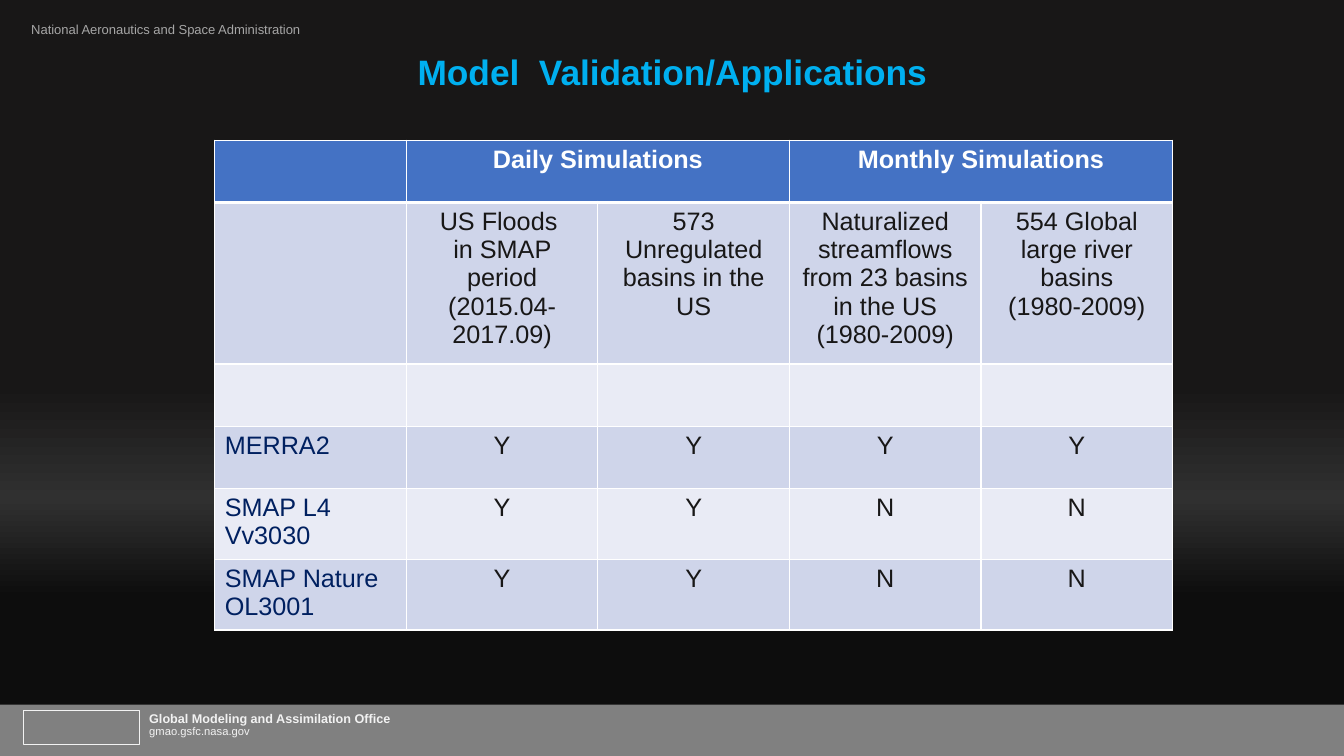
from copy import deepcopy

from lxml import etree
from pptx import Presentation
from pptx.dml.color import RGBColor
from pptx.enum.shapes import MSO_SHAPE
from pptx.enum.text import MSO_ANCHOR, PP_ALIGN
from pptx.oxml.ns import qn
from pptx.util import Inches, Pt

RECT = MSO_SHAPE.RECTANGLE
LEFT, CENTER = PP_ALIGN.LEFT, PP_ALIGN.CENTER
TOP = MSO_ANCHOR.TOP


def rgb(value):
    return RGBColor.from_string(value)


def write(tf, lines, color, align=LEFT, spacing=None):
    """Fill a text frame; each line is (text, size, bold), \v breaks a line."""
    tf.word_wrap = True
    for i, (text, size, bold) in enumerate(lines):
        p = tf.paragraphs[0] if i == 0 else tf.add_paragraph()
        p.text = text
        p.alignment, p.line_spacing = align, spacing
        for r in p.runs:
            for name, value in dict(name="Arial", size=Pt(size), bold=bold).items():
                setattr(r.font, name, value)
            r.font.color.rgb = rgb(color)


prs = Presentation()
prs.slide_width, prs.slide_height = Inches(13.33), Inches(7.5)
s = prs.slides.add_slide(prs.slide_layouts[6])

# Background gradient, running upwards
fill = s.background.fill
fill.gradient()
fill.gradient_angle = 90
stop_list = s._element.find(".//" + qn("a:gsLst"))
stop_list.append(deepcopy(stop_list[-1]))
stops = [(0.21, "0D0D0D"), (0.34, "303030"), (0.49, "181717")]
for stop, (position, color) in zip(fill.gradient_stops, stops):
    stop.position = position
    stop.color.rgb = rgb(color)

# Footer band and plain outlined box
band = s.shapes.add_shape(RECT, 0, Inches(6.99), prs.slide_width, Inches(0.51))
band.shadow.inherit = False
band.fill.solid()
band.fill.fore_color.rgb = rgb("808080")
band.line.fill.background()

box = s.shapes.add_shape(RECT, Inches(0.23), Inches(7.05), Inches(1.15), Inches(0.34))
box.shadow.inherit = False
box.fill.background()
box.line.color.rgb = rgb("F2F2F2")
box.line.width = Pt(0.5)

# Text boxes: position, insets (x, y), lines, colour, alignment, line spacing
text_boxes = [
    ((1.48, 7.07, 2.82, 0.26), (0, 0),
     [("Global Modeling and Assimilation Office", 9, True), ("gmao.gsfc.nasa.gov", 8, False)],
     "F2F2F2", LEFT, 0.9),
    ((0.16, 0.14, 3.91, 0.34), (0.15, 0.07),
     [("National Aeronautics and Space Administration", 9.3, False)], "A6A6A6", LEFT, None),
    ((0.92, 0.49, 11.5, 0.9), (0.1, 0.06),
     [("Model  Validation/Applications", 25.2, True)], "00B0F0", CENTER, 0.9),
]
for place, (inset_x, inset_y), lines, color, align, spacing in text_boxes:
    tf = s.shapes.add_textbox(*map(Inches, place)).text_frame
    tf.margin_left = tf.margin_right = Inches(inset_x)
    tf.margin_top = tf.margin_bottom = Inches(inset_y)
    tf.vertical_anchor = TOP
    write(tf, lines, color, align, spacing)

# Validation table
rows = [
    ["", "Daily Simulations", "", "Monthly Simulations", ""],
    ["", "US Floods \vin SMAP period (2015.04-2017.09)", "573 Unregulated basins in the US",
     "Naturalized streamflows from 23 basins in the US\n(1980-2009)",
     "554 Global large river basins\v(1980-2009)"],
    [""] * 5,
    ["MERRA2", "Y", "Y", "Y", "Y"],
    ["SMAP L4\vVv3030", "Y", "Y", "N", "N"],
    ["SMAP Nature \vOL3001", "Y", "Y", "N", "N"],
]
col_width, row_height = Inches(1.9), Inches(0.62)
table = s.shapes.add_table(len(rows), 5, Inches(2.13), Inches(1.39),
                           col_width * 5, row_height * len(rows)).table
for column in table.columns:
    column.width = col_width
for row in table.rows:
    row.height = row_height
for first in (1, 3):
    table.cell(0, first).merge(table.cell(0, first + 1))

for i, row in enumerate(rows):
    header = i == 0
    for j, text in enumerate(row):
        cell = table.cell(i, j)
        color = "FFFFFF" if header else "002060" if j == 0 else "181717"
        lines = [(line, 18, header) for line in text.split("\n")]
        write(cell.text_frame, lines, color, CENTER if j else LEFT)

        # White borders, heavier between header and body
        tc_pr = cell._tc.get_or_add_tcPr()
        for side in "LRTB":
            heavy = (i, side) in ((0, "B"), (1, "T"))
            ln = etree.SubElement(tc_pr, qn("a:ln" + side), w=str(Pt(3 if heavy else 1)))
            solid = etree.SubElement(ln, qn("a:solidFill"))
            etree.SubElement(solid, qn("a:srgbClr"), val="FFFFFF")
        cell.fill.solid()
        cell.fill.fore_color.rgb = rgb("4472C4" if header else "CFD5EA" if i % 2 else "E9EBF5")

prs.save("out.pptx")
